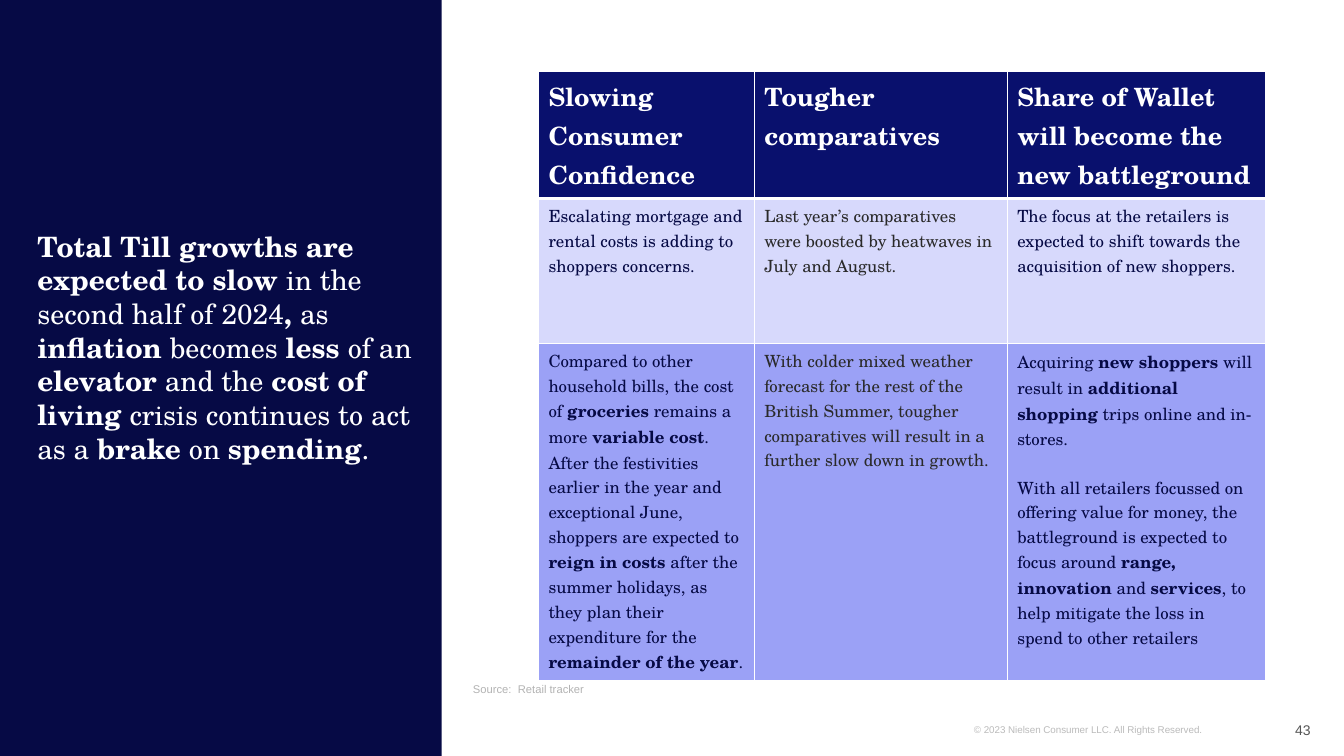
from dataclasses import dataclass

from lxml.etree import SubElement
from pptx import Presentation
from pptx.dml.color import RGBColor
from pptx.enum.shapes import MSO_SHAPE
from pptx.enum.text import MSO_ANCHOR as ANCHOR, MSO_AUTO_SIZE as AUTO, PP_ALIGN as ALIGN
from pptx.oxml.ns import qn
from pptx.util import Pt

EMU_PER_PX = 9144  # 100 px to the inch


@dataclass(frozen=True)
class Theme:
    serif: str = "TeX Gyre Schola"
    sans: str = "Arial"
    navy: str = "060A45"
    header: str = "09106D"
    pale: str = "D7D9FC"
    violet: str = "9BA1F6"
    white: str = "FFFFFF"
    ink: str = "2A2A2A"
    number: str = "555555"
    source: str = "B3B3B3"
    copyright: str = "BBBBBB"
    title_pt: int = 20
    head_pt: int = 18
    cell_pt: int = 12
    number_pt: int = 10
    source_pt: int = 8
    copyright_pt: int = 7


@dataclass(frozen=True)
class Box:
    left: int
    top: int
    width: int
    height: int

    def emu(self) -> list[int]:
        return [px(v) for v in (self.left, self.top, self.width, self.height)]


@dataclass(frozen=True)
class Row:
    height: int
    fill: str
    size: int
    colors: tuple[str, str, str]
    rule: int
    texts: tuple[str, str, str]


T = Theme()
BODY_COLORS = (T.navy, T.ink, T.navy)
TITLE = ("**Total Till growths are expected to slow **in the second half of 2024**, **as "
         "**inflation** becomes **less **of an **elevator **and the **cost of living **"
         "crisis continues to act as a **brake** on **spending**.")
TABLE_BOX = Box(534, 71, 721, 604)
COLUMNS = (214, 251, 256)
ROWS = (
    Row(126, T.header, T.head_pt, (T.white,) * 3, 3, (
        "**Slowing Consumer Confidence**",
        "**Tougher comparatives**",
        "**Share of Wallet will become the new battleground**")),
    Row(144, T.pale, T.cell_pt, BODY_COLORS, 1, (
        "Escalating mortgage and rental costs is adding to shoppers concerns.",
        "Last year’s comparatives were boosted by heatwaves in July and August.",
        "The focus at the retailers is expected to shift towards the acquisition "
        "of new shoppers.")),
    Row(334, T.violet, T.cell_pt, BODY_COLORS, 1, (
        "Compared to other household bills, the cost of **groceries** remains a more "
        "**variable cost**. After the festivities earlier in the year and exceptional "
        "June, shoppers are expected to **reign in costs **after the summer holidays, "
        "as they plan their expenditure for the **remainder of the year**.",
        "With colder mixed weather forecast for the rest of the British Summer, tougher "
        "comparatives will result in a further slow down in growth.",
        "Acquiring **new shoppers **will result in **additional shopping **trips online "
        "and in-stores.\nWith all retailers focussed on offering value for money, the "
        "battleground is expected to focus around **range, innovation **and "
        "**services**, to help mitigate the loss in spend to other retailers")),
)


def px(value: int) -> int:
    return value * EMU_PER_PX


def rgb(color: str) -> RGBColor:
    return RGBColor.from_string(color)


def write(tf, text: str, *, size: int, color: str, font: str = T.sans, align=ALIGN.LEFT,
          line=None, gap: int = 0, bullet: bool = True) -> None:
    """Fill a text frame; ** switches bold and a line feed starts a paragraph."""
    for i, part in enumerate(text.split("\n")):
        p = tf.add_paragraph() if i else tf.paragraphs[0]
        if not bullet:
            pPr = p._p.get_or_add_pPr()
            pPr.set("marL", "0")
            pPr.set("indent", "0")
            SubElement(pPr, qn("a:buNone"))
        p.alignment = align
        p.space_before = Pt(gap if i else 0)
        if line:
            p.line_spacing = line
        for j, piece in enumerate(part.split("**")):
            if piece:
                r = p.add_run()
                r.text = piece
                r.font.name, r.font.size = font, Pt(size)
                r.font.bold = j % 2 == 1
                r.font.color.rgb = rgb(color)


def frame(sp, box: Box, anchor):
    """Place a shape and return its text frame without side insets."""
    sp.left, sp.top, sp.width, sp.height = box.emu()
    tf = sp.text_frame
    tf.word_wrap, tf.auto_size = True, AUTO.NONE
    tf.margin_left = tf.margin_right = 0
    tf.margin_top = tf.margin_bottom = px(5)
    tf.vertical_anchor = anchor
    return tf


def add_panel(s) -> None:
    """Draw the navy side panel behind the title."""
    sp = s.shapes.add_shape(MSO_SHAPE.RECTANGLE, *Box(0, 0, 438, 750).emu())
    sp.shadow.inherit = False
    sp.fill.solid()
    sp.fill.fore_color.rgb = rgb(T.navy)
    sp.line.fill.background()
    s.shapes.title._element.addprevious(sp._element)


def set_borders(cell, top: int, bottom: int) -> None:
    tcPr = cell._tc.get_or_add_tcPr()
    widths = {"a:lnL": 1, "a:lnR": 1, "a:lnT": top, "a:lnB": bottom}
    for i, (tag, width) in enumerate(widths.items()):
        ln = tcPr.makeelement(qn(tag), {"w": str(Pt(width))})
        fill = SubElement(ln, qn("a:solidFill"))
        SubElement(fill, qn("a:srgbClr"), val=T.white)
        tcPr.insert(i, ln)


def add_outlook_table(s) -> None:
    table = s.shapes.add_table(len(ROWS), len(COLUMNS), *TABLE_BOX.emu()).table
    for column, width in zip(table.columns, COLUMNS):
        column.width = px(width)
    above = 1
    for i, row in enumerate(ROWS):
        table.rows[i].height = px(row.height)
        for j, (text, color) in enumerate(zip(row.texts, row.colors)):
            cell = table.cell(i, j)
            cell.fill.solid()
            cell.fill.fore_color.rgb = rgb(row.fill)
            set_borders(cell, above, row.rule)
            write(cell.text_frame, text, size=row.size, color=color, font=T.serif, gap=17)
        above = row.rule


def main() -> None:
    prs = Presentation()
    prs.slide_width, prs.slide_height = px(1333), px(750)
    s = prs.slides.add_slide(prs.slide_layouts[1])
    title, source = s.shapes.title, s.placeholders[1]

    add_panel(s)
    write(frame(title, Box(37, 205, 383, 261), ANCHOR.BOTTOM), TITLE,
          size=T.title_pt, color=T.white, font=T.serif, line=Pt(24))
    write(frame(source, Box(469, 655, 831, 40), ANCHOR.BOTTOM), "Source:  Retail tracker",
          size=T.source_pt, color=T.source, bullet=False)
    add_outlook_table(s)

    rights = s.shapes.add_textbox(0, 0, 0, 0)
    write(frame(rights, Box(966, 713, 284, 22), ANCHOR.TOP),
          "© 2023 Nielsen Consumer LLC. All Rights Reserved.",
          size=T.copyright_pt, color=T.copyright)
    number = s.shapes.add_textbox(0, 0, 0, 0)
    write(frame(number, Box(1201, 704, 99, 40), ANCHOR.MIDDLE), "43",
          size=T.number_pt, color=T.number, align=ALIGN.RIGHT)
    prs.save("out.pptx")


if __name__ == "__main__":
    main()
